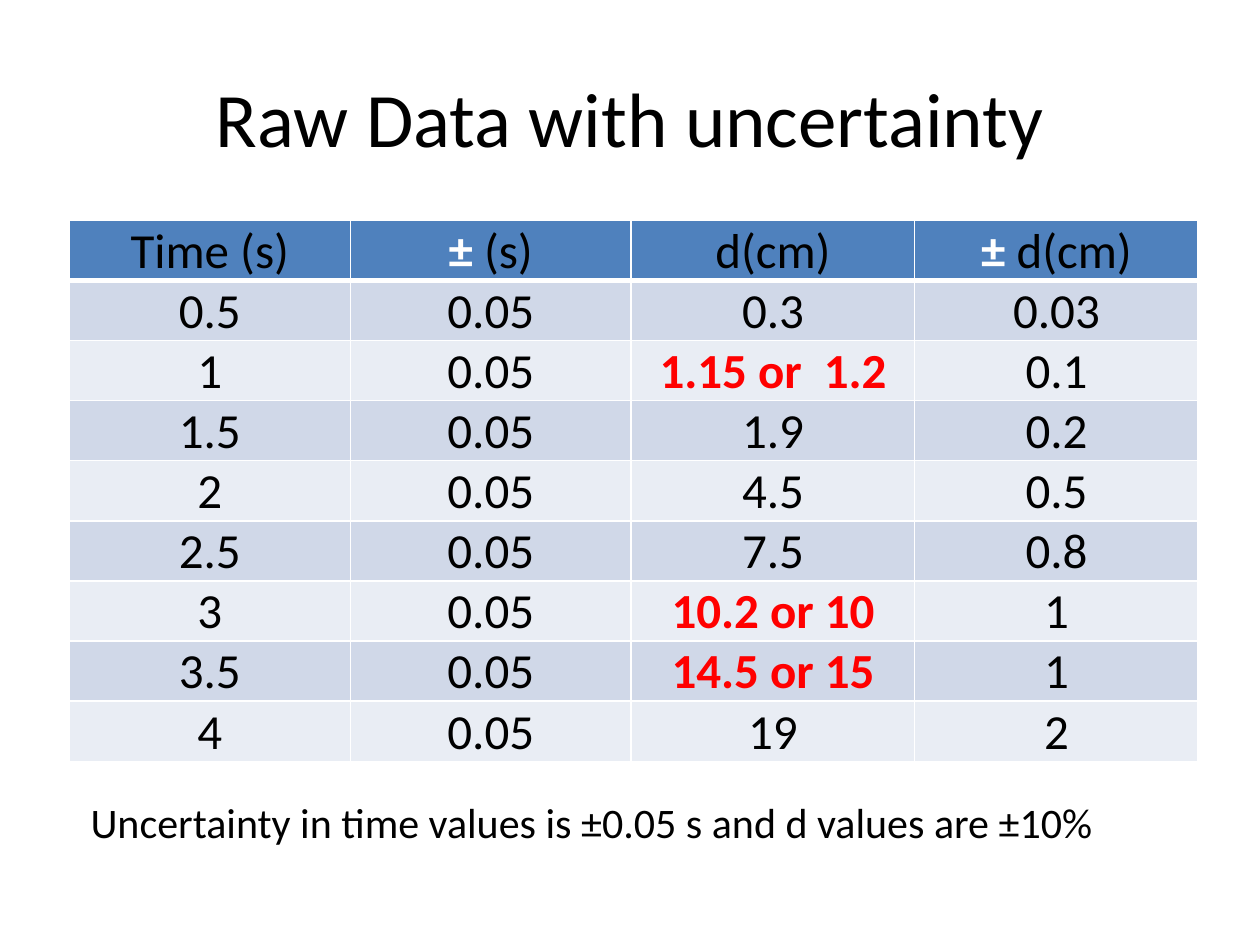
from lxml.etree import SubElement
from pptx import Presentation
from pptx.dml.color import RGBColor
from pptx.enum.text import MSO_ANCHOR, PP_ALIGN
from pptx.oxml.ns import qn
from pptx.util import Inches, Pt

BLACK = RGBColor(0x00, 0x00, 0x00)
WHITE = RGBColor(0xFF, 0xFF, 0xFF)
RED = RGBColor(0xFF, 0x00, 0x00)
HEADER_BLUE = RGBColor(0x4F, 0x81, 0xBD)
BANDS = [RGBColor(0xE9, 0xED, 0xF4), RGBColor(0xD0, 0xD8, 0xE8)]

PLAIN = {"bold": False, "color": BLACK}
SYMBOL = {"bold": True, "color": WHITE}
ROUNDED = {"bold": True, "color": RED}

HEADER = [
    [("Time (s)", PLAIN)],
    [("±", SYMBOL), (" (s)", PLAIN)],
    [("d(cm)", PLAIN)],
    [("± ", SYMBOL), ("d(cm)", PLAIN)],
]
MEASUREMENTS = [
    ("0.5", "0.3", "0.03"),
    ("1", "1.15 or  1.2", "0.1"),
    ("1.5", "1.9", "0.2"),
    ("2", "4.5", "0.5"),
    ("2.5", "7.5", "0.8"),
    ("3", "10.2 or 10", "1"),
    ("3.5", "14.5 or 15", "1"),
    ("4", "19", "2"),
]
TIME_UNCERTAINTY = "0.05"


def write_runs(paragraph, runs, size):
    for text, style in runs:
        run = paragraph.add_run()
        run.text = text
        font_format = {"name": "Calibri", "size": Pt(size), "bold": style["bold"]}
        for name, value in font_format.items():
            setattr(run.font, name, value)
        run.font.color.rgb = style["color"]


def add_border(cell, side, points):
    """Add a white border; call before filling, as borders precede the fill."""
    properties = cell._tc.get_or_add_tcPr()
    line = SubElement(properties, qn(f"a:ln{side}"), w=str(Pt(points)))
    fill = SubElement(line, qn("a:solidFill"))
    SubElement(fill, qn("a:srgbClr"), val=str(WHITE))


presentation = Presentation()
presentation.slide_width = width = Inches(10)
presentation.slide_height = height = Inches(7.5)
slide = presentation.slides.add_slide(presentation.slide_layouts[6])

# Title and note: left, top, width, height as shares of the slide
texts = [
    ("Raw Data with uncertainty", 44, PP_ALIGN.CENTER, MSO_ANCHOR.MIDDLE,
     (0.05, 0.04, 0.9, 1 / 6)),
    ("Uncertainty in time values is ±0.05 s and d values are ±10%", 24,
     PP_ALIGN.LEFT, MSO_ANCHOR.TOP, (0.062, 0.836, 0.891, 0.068)),
]
for text, size, alignment, anchor, (left, top, across, down) in texts:
    box = slide.shapes.add_textbox(
        int(left * width), int(top * height), int(across * width), int(down * height))
    frame = box.text_frame
    frame.word_wrap = True
    frame.vertical_anchor = anchor
    frame.paragraphs[0].alignment = alignment
    write_runs(frame.paragraphs[0], [(text, PLAIN)], size)

# Data table
rows = [HEADER]
for time, distance, uncertainty in MEASUREMENTS:
    distance_style = ROUNDED if " or " in distance else PLAIN
    rows.append([[(time, PLAIN)], [(TIME_UNCERTAINTY, PLAIN)],
                 [(distance, distance_style)], [(uncertainty, PLAIN)]])

column_shares = [0.223, 0.223, 0.225, 0.225]
table = slide.shapes.add_table(
    len(rows), len(column_shares), int(0.055 * width), int(0.233 * height),
    int(sum(column_shares) * width), int(0.572 * height)).table
for column, share in zip(table.columns, column_shares):
    column.width = int(share * width)

cell_format = {
    "vertical_anchor": MSO_ANCHOR.BOTTOM,
    "margin_left": Inches(0.01),
    "margin_right": Inches(0.01),
    "margin_top": Inches(0.01),
    "margin_bottom": 0,
}
for row_index, row in enumerate(rows):
    for column_index, runs in enumerate(row):
        cell = table.cell(row_index, column_index)
        for name, value in cell_format.items():
            setattr(cell, name, value)
        for side in "LRTB":
            below_header = (row_index, side) in [(0, "B"), (1, "T")]
            add_border(cell, side, 3 if below_header else 1)
        cell.fill.solid()
        cell.fill.fore_color.rgb = BANDS[row_index % 2] if row_index else HEADER_BLUE
        paragraph = cell.text_frame.paragraphs[0]
        paragraph.alignment = PP_ALIGN.CENTER
        write_runs(paragraph, runs, 28)

presentation.save("out.pptx")
